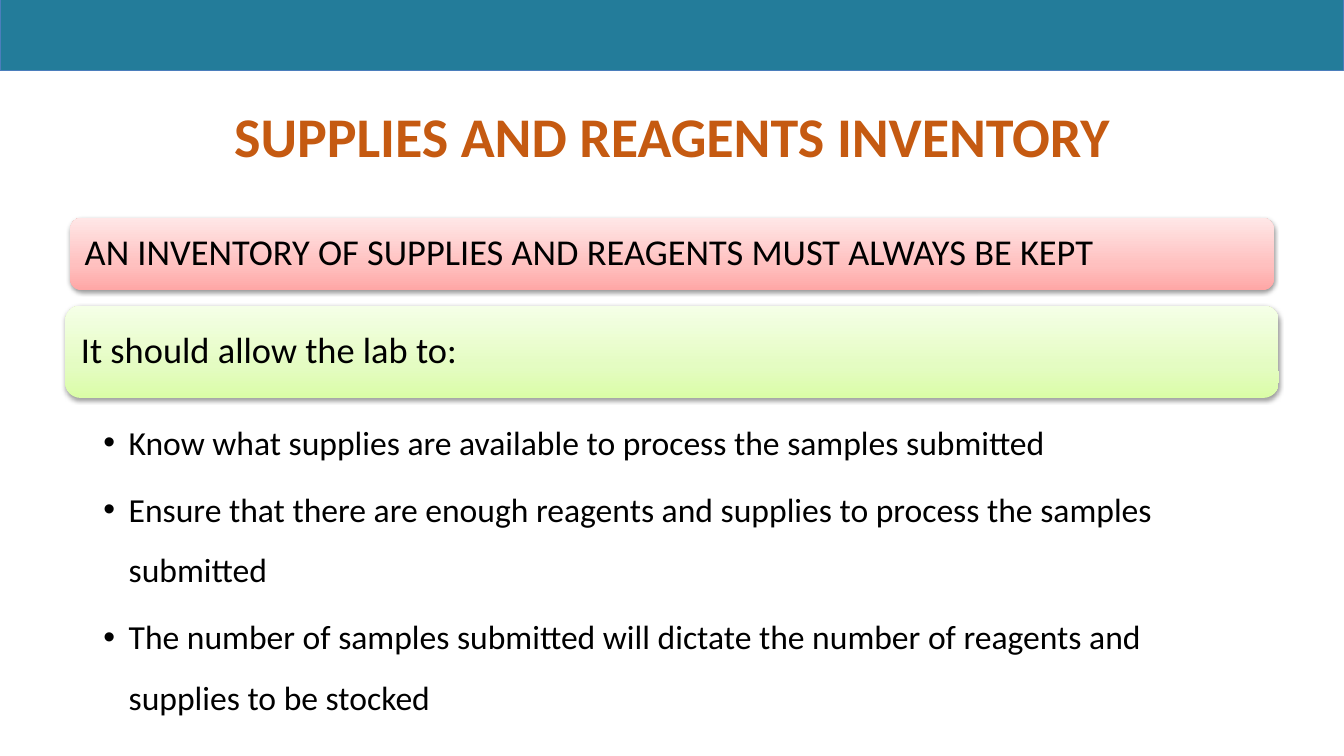
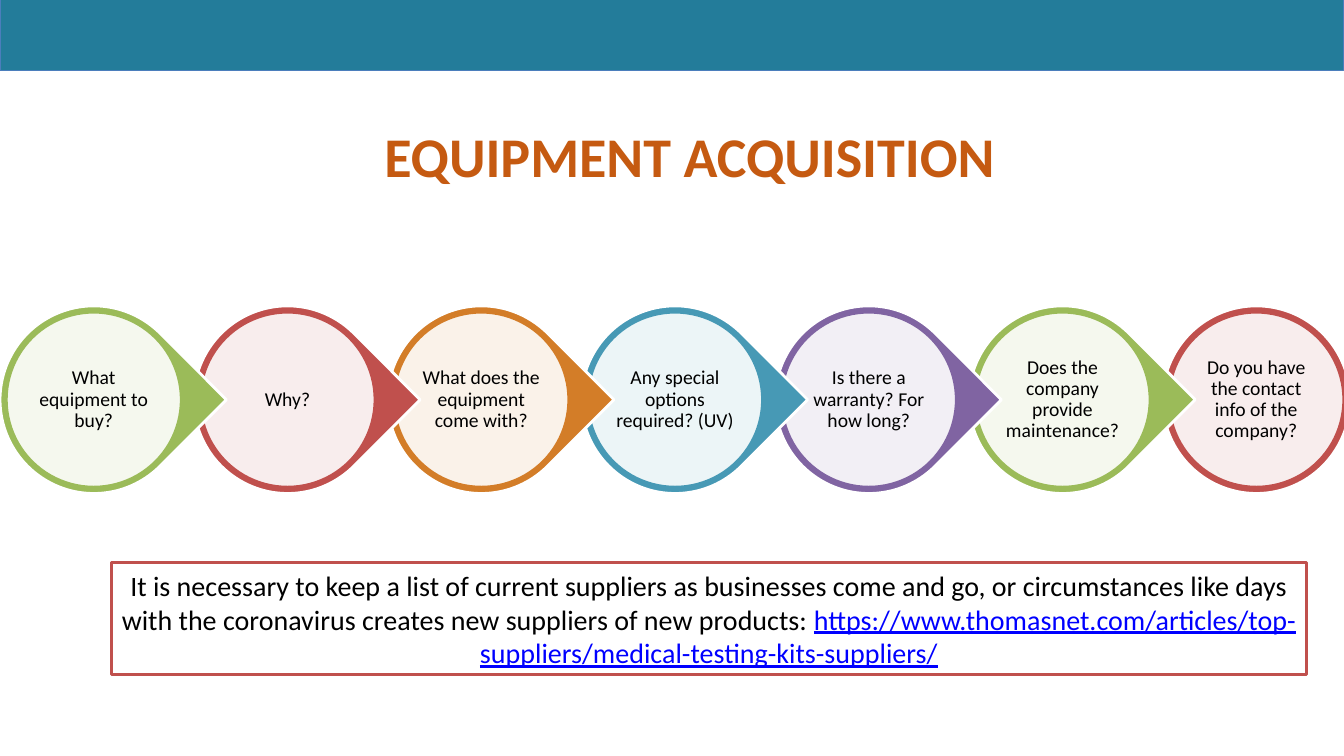
import copy

import pptx
import pptx.dml.color
import pptx.enum.shapes
import pptx.enum.text
import pptx.oxml
import pptx.oxml.ns
import pptx.util

Pt = pptx.util.Pt
SHAPE = pptx.enum.shapes.MSO_SHAPE
ALIGN = pptx.enum.text.PP_ALIGN
ANCHOR = pptx.enum.text.MSO_ANCHOR

COLORS = {
    "band": "237C9A",
    "band_edge": "4B7EBC",
    "title": "C55A11",
    "text": "000000",
    "link": "0000FF",
    "white": "FFFFFF",
    "green": "9BBB59",
    "red": "C0504D",
    "orange": "D37D28",
    "teal": "4799B5",
    "purple": "8064A2",
}
# Bottom to top
GRADIENTS = {
    "rose": ((0, "FFA6A5"), (0.35, "FFC0BF"), (1, "FFE7E7")),
    "lime": ((0, "DAFDA7"), (0.35, "E4FCC2"), (1, "F5FFE7")),
}
FONT = "Calibri"
WIDTH, HEIGHT = 960, 540
TITLE_AND_BODY, TITLE_ONLY = 1, 5


def rgb(hex_color):
    return pptx.dml.color.RGBColor.from_string(hex_color)


def xml(tag, **attributes):
    """Make an element of the drawing namespace."""
    element = pptx.oxml.parse_xml(f"<a:{tag} {pptx.oxml.ns.nsdecls('a')}/>")
    for name, value in attributes.items():
        element.set(name, str(value))
    return element


class Deck:
    def __init__(self):
        self.prs = pptx.Presentation()
        self.prs.slide_width, self.prs.slide_height = Pt(WIDTH), Pt(HEIGHT)
        self.slide = None
        self.has_band = False

    def add_slide(self, layout, title, left, top, width):
        self.slide = self.prs.slides.add_slide(self.prs.slide_layouts[layout])
        if not self.has_band:
            self.add_master_band()
        heading = self.slide.shapes.title
        self.place(heading, left, top, width, 55.5)
        frame = self.frame(heading, ANCHOR.TOP)
        self.add_text(frame.paragraphs[0], title, 40, "title", ALIGN.CENTER).bold = True

    def add_master_band(self):
        """Draw the top band and move it to the back of the slide master."""
        band = self.shape(SHAPE.RECTANGLE, 0, 0, WIDTH, 50.4, "band", "band_edge", 0.75)
        self.prs.slide_master.shapes.element.insert(2, band.element)
        self.has_band = True

    def place(self, shape, left, top, width, height):
        shape.left, shape.top = Pt(left), Pt(top)
        shape.width, shape.height = Pt(width), Pt(height)

    def frame(self, shape, anchor=ANCHOR.MIDDLE, insets=(7.2, 3.6, 7.2, 3.6)):
        frame = shape.text_frame
        frame.word_wrap = True
        frame.auto_size = pptx.enum.text.MSO_AUTO_SIZE.NONE
        frame.vertical_anchor = anchor
        (frame.margin_left, frame.margin_top,
         frame.margin_right, frame.margin_bottom) = map(Pt, insets)
        return frame

    def add_text(self, paragraph, text, size, color="text", align=ALIGN.LEFT, spacing=1):
        """Add one run to the paragraph and return its font."""
        paragraph.alignment = align
        paragraph.line_spacing = spacing
        run = paragraph.add_run()
        run.text = text
        run.font.name, run.font.size = FONT, Pt(size)
        run.font.color.rgb = rgb(COLORS[color])
        return run.font

    def shape(self, kind, left, top, width, height, fill=None, line=None, weight=2):
        shape = self.slide.shapes.add_shape(kind, Pt(left), Pt(top), Pt(width), Pt(height))
        shape.shadow.inherit = False
        if fill:
            shape.fill.solid()
            shape.fill.fore_color.rgb = rgb(COLORS[fill])
        if line:
            shape.line.color.rgb = rgb(COLORS[line])
            shape.line.width = Pt(weight)
        else:
            shape.line.fill.background()
        return shape

    def banner(self, text, left, top, width, height, gradient):
        """Add a rounded bar with a vertical gradient and a soft shadow."""
        bar = self.shape(SHAPE.ROUNDED_RECTANGLE, left, top, width, height)
        bar.fill.gradient()
        bar.fill.gradient_angle = 90
        stop_list = bar.element.xpath(".//a:gsLst")[0]
        stop_list.insert(1, copy.deepcopy(stop_list[0]))
        for stop, (position, color) in zip(bar.fill.gradient_stops, GRADIENTS[gradient]):
            stop.position, stop.color.rgb = position, rgb(color)
        shadow = xml("outerShdw", blurRad=Pt(3.1), dist=Pt(1.6), dir=5400000, rotWithShape=0)
        shade = xml("srgbClr", val=COLORS["text"])
        shade.append(xml("alpha", val=38000))
        shadow.append(shade)
        bar.element.xpath("./p:spPr/a:effectLst")[0].append(shadow)
        frame = self.frame(bar, insets=(8, 8, 8, 8))
        self.add_text(frame.paragraphs[0], text, 26, spacing=0.9)

    def bullets(self, items, left, top, width, height):
        body = self.slide.placeholders[1]
        self.place(body, left, top, width, height)
        frame = self.frame(body, ANCHOR.TOP, (27.3, 2.2, 13.7, 2.2))
        for index, item in enumerate(items):
            paragraph = frame.add_paragraph() if index else frame.paragraphs[0]
            properties = paragraph._p.get_or_add_pPr()
            properties.set("marL", str(Pt(18)))
            properties.set("indent", str(Pt(-18)))
            properties.append(xml("buFont", typeface="Arial"))
            properties.append(xml("buChar", char="•"))
            paragraph.space_before, paragraph.space_after = Pt(0), Pt(4.8)
            self.add_text(paragraph, item, 24, spacing=1.5)

    def step(self, question, left, top, color, is_last):
        """Add a circle with a question, pointing right unless it is the last."""
        size, rim = 134, 4.5
        kind = SHAPE.OVAL if is_last else SHAPE.TEAR
        pointer = self.shape(kind, left, top, size, size, color, "white")
        if not is_last:
            pointer.rotation = 45
        inner = size - 2 * rim
        disc = self.shape(SHAPE.OVAL, left + rim, top + rim, inner, inner, "white", color)
        tint = disc.element.xpath("./p:spPr/a:solidFill/a:srgbClr")[0]
        tint.append(xml("alpha", val=90000))
        frame = self.frame(disc, insets=(1.4, 1.4, 1.4, 1.4))
        self.add_text(frame.paragraphs[0], question, 14, align=ALIGN.CENTER, spacing=0.9)

    def note(self, text, address, left, top, width, height):
        box = self.shape(SHAPE.RECTANGLE, left, top, width, height, "white", "red")
        paragraph = self.frame(box).paragraphs[0]
        self.add_text(paragraph, text, 20, align=ALIGN.CENTER)
        self.add_text(paragraph, address, 20, "link", ALIGN.CENTER).underline = True


def add_inventory(deck):
    deck.add_slide(TITLE_AND_BODY, "SUPPLIES AND REAGENTS INVENTORY", 69, 69, 822)
    deck.banner("AN INVENTORY OF SUPPLIES AND REAGENTS MUST ALWAYS BE KEPT",
                50, 155.5, 860, 52, "rose")
    deck.banner("It should allow the lab to:", 46.6, 218.3, 866.8, 66, "lime")
    deck.bullets([
        "Know what supplies are available to process the samples submitted",
        "Ensure that there are enough reagents and supplies to process the samples submitted",
        "The number of samples submitted will dictate the number of reagents and "
        "supplies to be stocked",
    ], 46.6, 284.4, 866.8, 220.5)


def add_acquisition(deck):
    deck.add_slide(TITLE_ONLY, "EQUIPMENT ACQUISITION", 57, 83, 871)
    steps = [
        ("What equipment to buy?", "green"),
        ("Why?", "red"),
        ("What does the equipment come with?", "orange"),
        ("Any special options required? (UV)", "teal"),
        ("Is there a warranty? For how long?", "purple"),
        ("Does the company provide maintenance?", "green"),
        ("Do you have the contact info of the company?", "red"),
    ]
    pitch, last = 138.4, len(steps) - 1
    # Right to left, so that each pointer overlaps the next circle
    for index, (question, color) in reversed(list(enumerate(steps))):
        deck.step(question, index * pitch, 218.5, color, index == last)
    deck.note("It is necessary to keep a list of current suppliers as businesses come and go, "
              "or circumstances like days with the coronavirus creates new suppliers of "
              "new products: ",
              "https://www.thomasnet.com/articles/top-suppliers/medical-testing-kits-suppliers/",
              79.7, 402, 853.3, 80)


def main():
    deck = Deck()
    add_inventory(deck)
    add_acquisition(deck)
    deck.prs.save("out.pptx")


if __name__ == "__main__":
    main()
